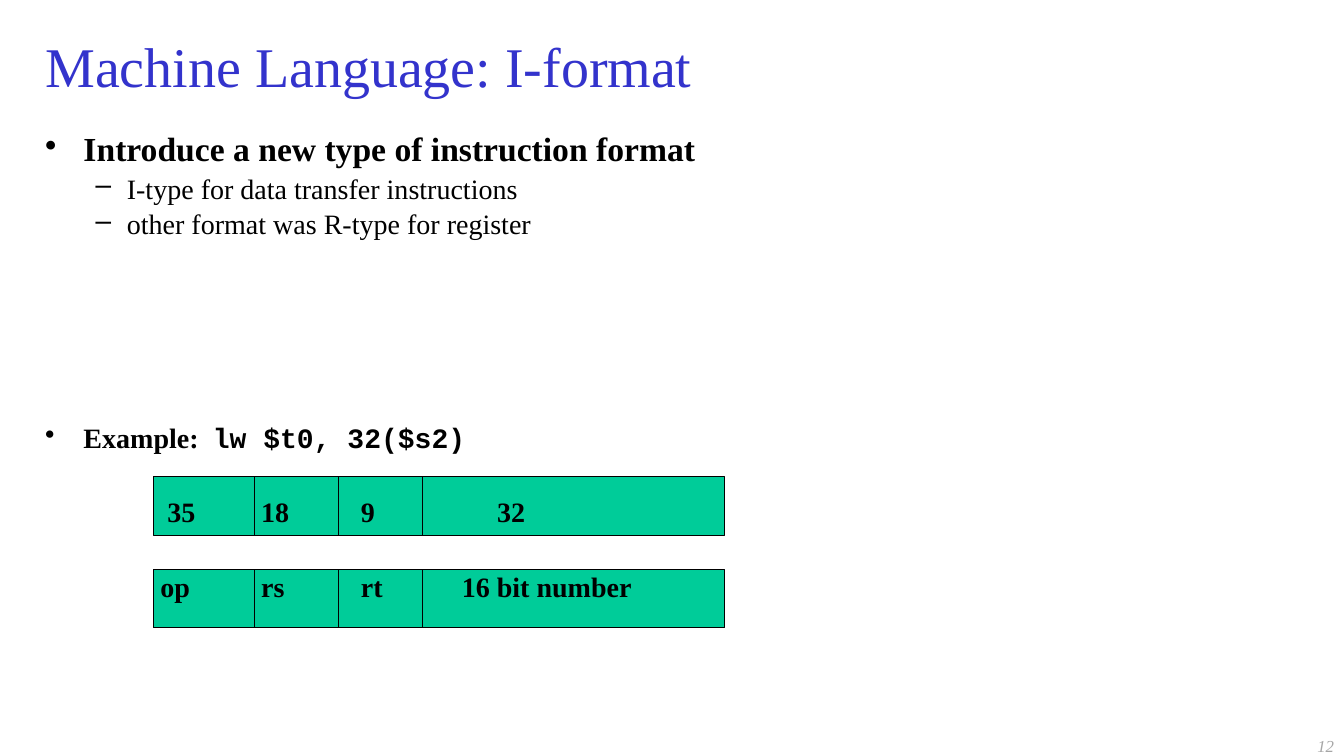
import pptx
import pptx.dml.color
import pptx.enum.shapes
import pptx.enum.text
import pptx.oxml
import pptx.oxml.ns
import pptx.util

Inches, Pt = pptx.util.Inches, pptx.util.Pt
RGBColor = pptx.dml.color.RGBColor
PP_ALIGN = pptx.enum.text.PP_ALIGN
MIDDLE = pptx.enum.text.MSO_ANCHOR.MIDDLE

BLUE = RGBColor(0x33, 0x33, 0xCC)
GREEN = RGBColor(0x00, 0xCC, 0x99)
GREY = RGBColor(0xA6, 0xA6, 0xA6)
BLACK = RGBColor(0, 0, 0)
SERIF, MONO = "Times New Roman", "Courier New"


def style(run, size, color=BLACK, bold=False, italic=False, face=SERIF):
    font = run.font
    font.name, font.size, font.bold, font.italic = face, Pt(size), bold, italic
    font.color.rgb = color


def set_bullet(paragraph, mark, margin, hanging):
    """Give the paragraph a bullet; margin and hanging are in inches."""
    properties = paragraph._p.get_or_add_pPr()
    properties.set("marL", str(Inches(margin)))
    properties.set("indent", str(-Inches(hanging)))
    bullet = pptx.oxml.parse_xml(f'<a:buChar {pptx.oxml.ns.nsdecls("a")} char="{mark}"/>')
    properties.append(bullet)


deck = pptx.Presentation()
deck.slide_width, deck.slide_height = Inches(13.33), Inches(7.5)
slide = deck.slides.add_slide(deck.slide_layouts[5])
shapes = slide.shapes

MARGIN, CONTENT_WIDTH = Inches(0.35), Inches(12.64)

title = shapes.title
title.left, title.top = MARGIN, Inches(0.24)
title.width, title.height = CONTENT_WIDTH, Inches(0.82)
title.text_frame.text = "Machine Language: I-format"
title.text_frame.vertical_anchor = MIDDLE
title.text_frame.paragraphs[0].alignment = PP_ALIGN.LEFT
style(title.text_frame.paragraphs[0].runs[0], 40, BLUE)

# Bullet points: text, size, bold, mark, margin, hanging, space before, line spacing
points = [
    ("Introduce a new type of instruction format", 24, True, "•", 0.38, 0.38, 5, 0.9),
    ("I-type for data transfer instructions", 20, False, "–", 0.81, 0.31, 4, 0.9),
    ("other format was R-type for register", 20, False, "–", 0.81, 0.31, 4, 0.9),
    ("Example:  ", 20, True, "•", 0.38, 0.38, 126, 1.1),
]
body = shapes.add_textbox(MARGIN, Inches(1.27), CONTENT_WIDTH, Inches(3.4)).text_frame
body.word_wrap = True
body.text = "\n".join(point[0] for point in points)
for paragraph, point in zip(body.paragraphs, points):
    wording, size, bold, mark, margin, hanging, before, spacing = point
    paragraph.space_before, paragraph.line_spacing = Pt(before), spacing
    set_bullet(paragraph, mark, margin, hanging)
    style(paragraph.runs[0], size, bold=bold)
instruction = body.paragraphs[-1].add_run()
instruction.text = "lw $t0, 32($s2)"
style(instruction, 20, bold=True, face=MONO)

# Instruction word: one bar for the values, one for the field names
BAR_LEFT, BAR_WIDTH, BAR_HEIGHT = 1.52, 5.67, 0.58
dividers = [2.52, 3.36, 4.19]
field_edges = [BAR_LEFT, *dividers, BAR_LEFT + BAR_WIDTH]
# Bar top, label drop below it, then each label with its left edge
bars = [
    (4.73, 0.18, [("35", 1.66), ("18", 2.59), ("9", 3.58), ("32", 4.93)]),
    (5.65, 0, [("op", 1.59), ("rs", 2.59), ("rt", 3.58), ("16 bit number", 4.58)]),
]
for top, drop, fields in bars:
    bar = shapes.add_shape(
        pptx.enum.shapes.MSO_SHAPE.RECTANGLE,
        Inches(BAR_LEFT), Inches(top), Inches(BAR_WIDTH), Inches(BAR_HEIGHT))
    bar.shadow.inherit = False
    bar.fill.solid()
    bar.fill.fore_color.rgb = GREEN
    bar.line.color.rgb, bar.line.width = BLACK, Pt(0.75)

    for x in dividers:
        divider = shapes.add_connector(
            pptx.enum.shapes.MSO_CONNECTOR.STRAIGHT,
            Inches(x), Inches(top), Inches(x), Inches(top + BAR_HEIGHT))
        divider.line.color.rgb, divider.line.width = BLACK, Pt(0.75)
        divider._element.spPr.append(
            pptx.oxml.parse_xml(f'<a:effectLst {pptx.oxml.ns.nsdecls("a")}/>'))

    for (label, left), field_end in zip(fields, field_edges[1:]):
        field = shapes.add_textbox(
            Inches(left), Inches(top + drop), Inches(field_end - left), Inches(0.32)).text_frame
        field.margin_left = field.margin_right = field.margin_top = field.margin_bottom = 0
        field.word_wrap = True
        field.text = label
        style(field.paragraphs[0].runs[0], 20, bold=True)

page_number = shapes.add_textbox(Inches(10.22), Inches(7.3), Inches(3.11), Inches(0.2)).text_frame
page_number.word_wrap = True
page_number.vertical_anchor = MIDDLE
page_number.text = "12"
page_number.paragraphs[0].alignment = PP_ALIGN.RIGHT
style(page_number.paragraphs[0].runs[0], 12, GREY, italic=True)

deck.save("out.pptx")
